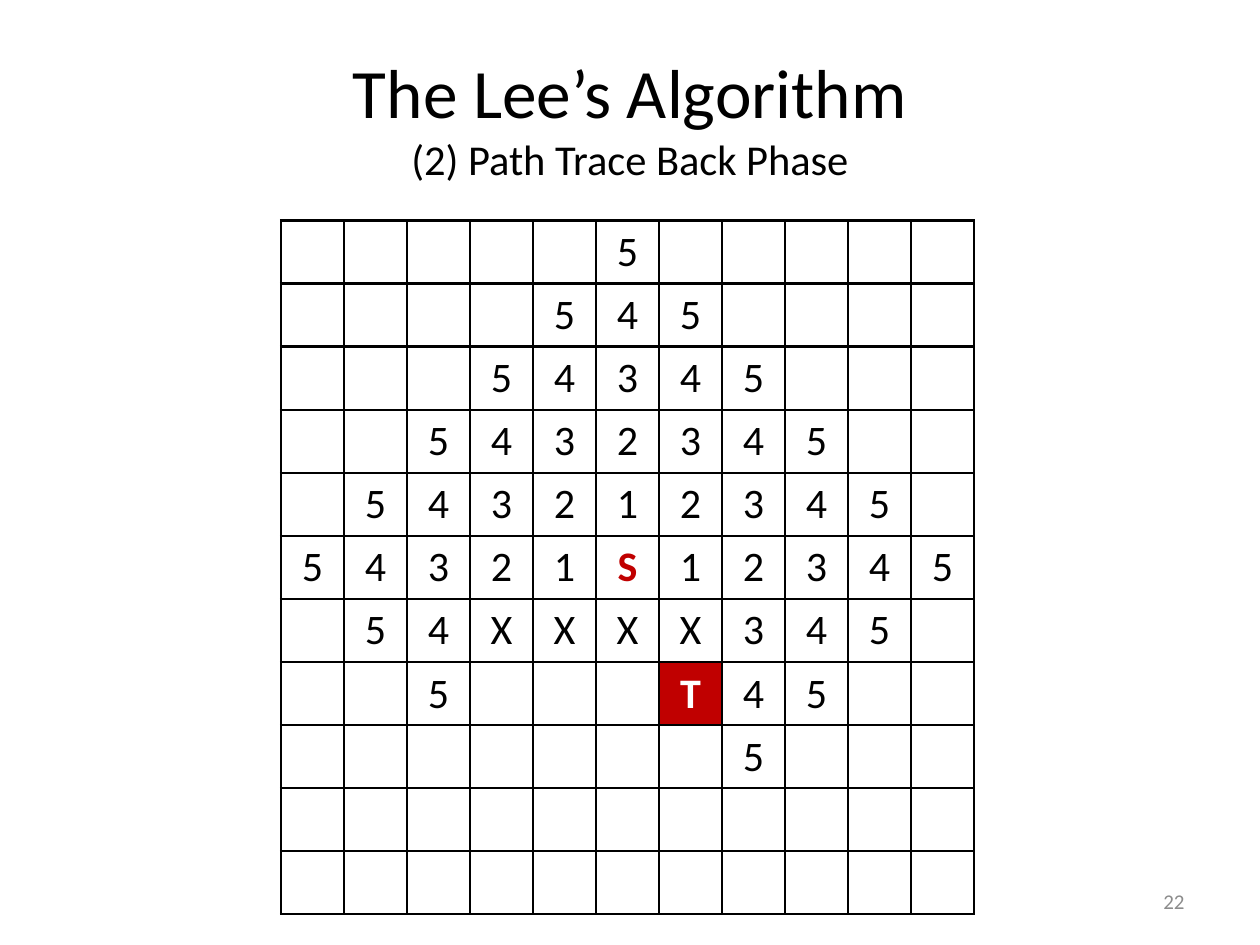
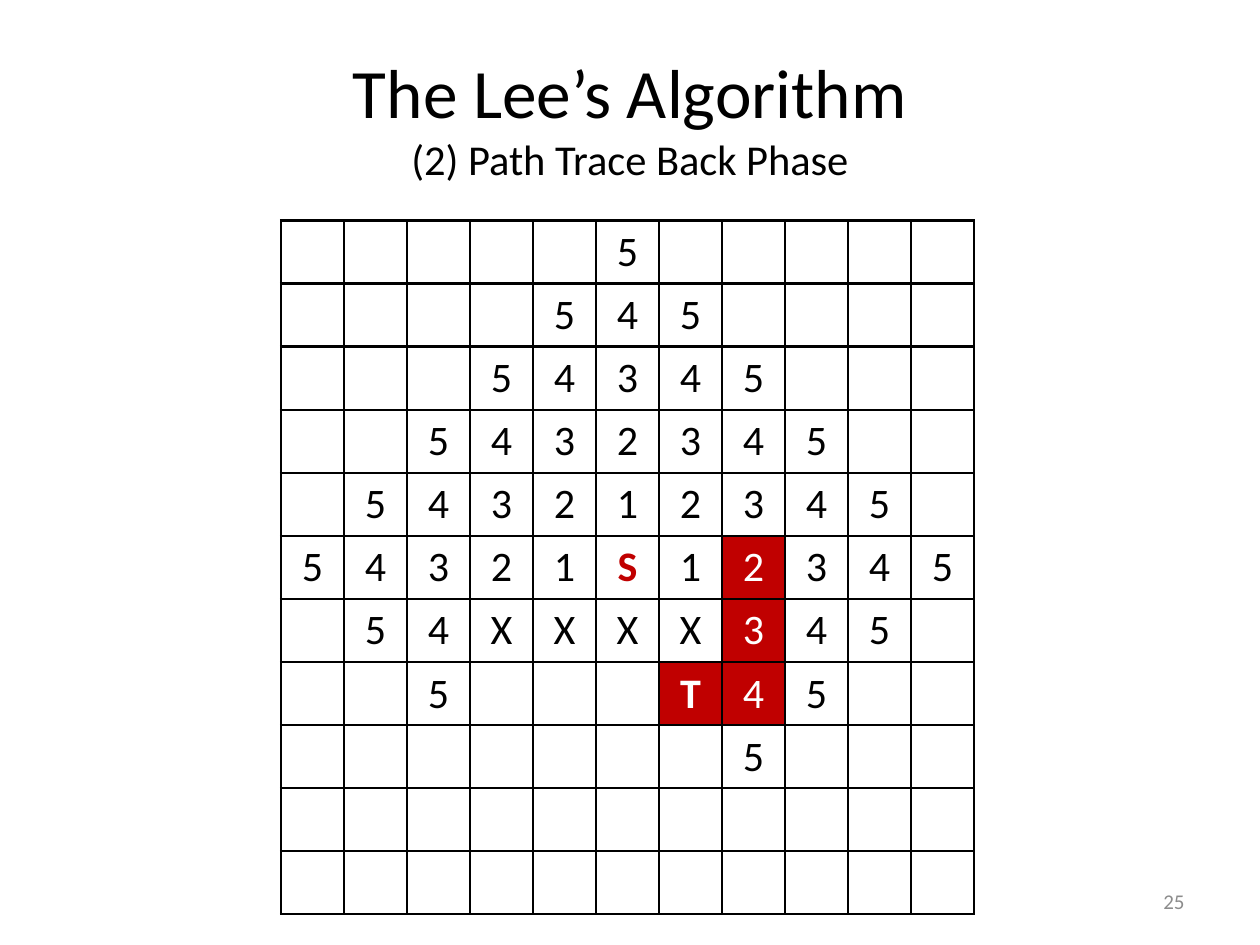
"""Build two steps of the path trace back phase of Lee's algorithm."""
from lxml import etree
from pptx import Presentation
from pptx.dml.color import RGBColor
from pptx.enum import text
from pptx.oxml.ns import qn
from pptx.util import Inches, Pt

BLACK = RGBColor(0x00, 0x00, 0x00)
WHITE = RGBColor(0xFF, 0xFF, 0xFF)
RED = RGBColor(0xC0, 0x00, 0x00)
GRAY = RGBColor(0x8C, 0x8C, 0x8C)

WAVE = [
    ".....5.....",
    "....545....",
    "...54345...",
    "..5432345..",
    ".543212345.",
    "54321S12345",
    ".54XXXX345.",
    "..5...T45..",
    ".......5...",
    "...........",
    "...........",
]
TARGET = (7, 6)
STEPS = [
    (22, [TARGET]),
    (25, [TARGET, (7, 7), (6, 7), (5, 7)]),
]


class Deck:
    def __init__(self):
        self.prs = Presentation()
        self.prs.slide_width, self.prs.slide_height = Inches(10), Inches(7.5)
        self.slide = None
        self.font = "Calibri"
        self.cell_side = Inches(0.5)
        self.cell_size = 24
        self.border = Pt(1.5)

    def new_slide(self):
        self.slide = self.prs.slides.add_slide(self.prs.slide_layouts[6])

    def run(self, paragraph, words, size, color, bold=False):
        run = paragraph.add_run()
        run.text = words
        run.font.name = self.font
        run.font.size = Pt(size)
        run.font.bold = bold
        run.font.color.rgb = color

    def text_box(self, left, top, width, height, align):
        box = self.slide.shapes.add_textbox(
            Inches(left), Inches(top), Inches(width), Inches(height))
        frame = box.text_frame
        frame.word_wrap = True
        frame.vertical_anchor = text.MSO_ANCHOR.MIDDLE
        paragraph = frame.paragraphs[0]
        paragraph.alignment = align
        return paragraph

    def title(self, heading, phase):
        lines = self.text_box(0.5, 0.3, 9, 1.25, text.PP_ALIGN.CENTER)
        self.run(lines, heading, 39.6, BLACK)
        lines.add_line_break()
        self.run(lines, phase, 24.3, BLACK)

    def page_number(self, number):
        footer = self.text_box(7.17, 6.95, 2.33, 0.4, text.PP_ALIGN.RIGHT)
        self.run(footer, str(number), 12, GRAY)

    def outline(self, cell):
        properties = cell._tc.get_or_add_tcPr()
        for side in ("a:lnL", "a:lnR", "a:lnT", "a:lnB"):
            line = etree.SubElement(properties, qn(side), w=str(self.border))
            fill = etree.SubElement(line, qn("a:solidFill"))
            etree.SubElement(fill, qn("a:srgbClr"), val=str(BLACK))

    def cell(self, cell, mark, on_path):
        self.outline(cell)
        cell.vertical_anchor = text.MSO_ANCHOR.MIDDLE
        if on_path:
            cell.fill.solid()
            cell.fill.fore_color.rgb = RED
        else:
            cell.fill.background()
        paragraph = cell.text_frame.paragraphs[0]
        paragraph.alignment = text.PP_ALIGN.CENTER
        if mark == ".":
            etree.SubElement(paragraph._p, qn("a:endParaRPr"),
                             sz=str(self.cell_size * 100))
            return
        color = WHITE if on_path else RED if mark == "S" else BLACK
        self.run(paragraph, mark, self.cell_size, color, mark in "ST")

    def grid(self, rows, path_cells):
        row_count, column_count = len(rows), len(rows[0])
        table = self.slide.shapes.add_table(
            row_count, column_count, Inches(2.23), Inches(1.75),
            self.cell_side * column_count, self.cell_side * row_count).table
        table.first_row = table.horz_banding = False
        for r, marks in enumerate(rows):
            for c, mark in enumerate(marks):
                self.cell(table.cell(r, c), mark, (r, c) in path_cells)


def main():
    deck = Deck()
    for number, path_cells in STEPS:
        deck.new_slide()
        deck.title("The Lee’s Algorithm", "(2) Path Trace Back Phase")
        deck.grid(WAVE, path_cells)
        deck.page_number(number)
    deck.prs.save("out.pptx")


if __name__ == "__main__":
    main()
